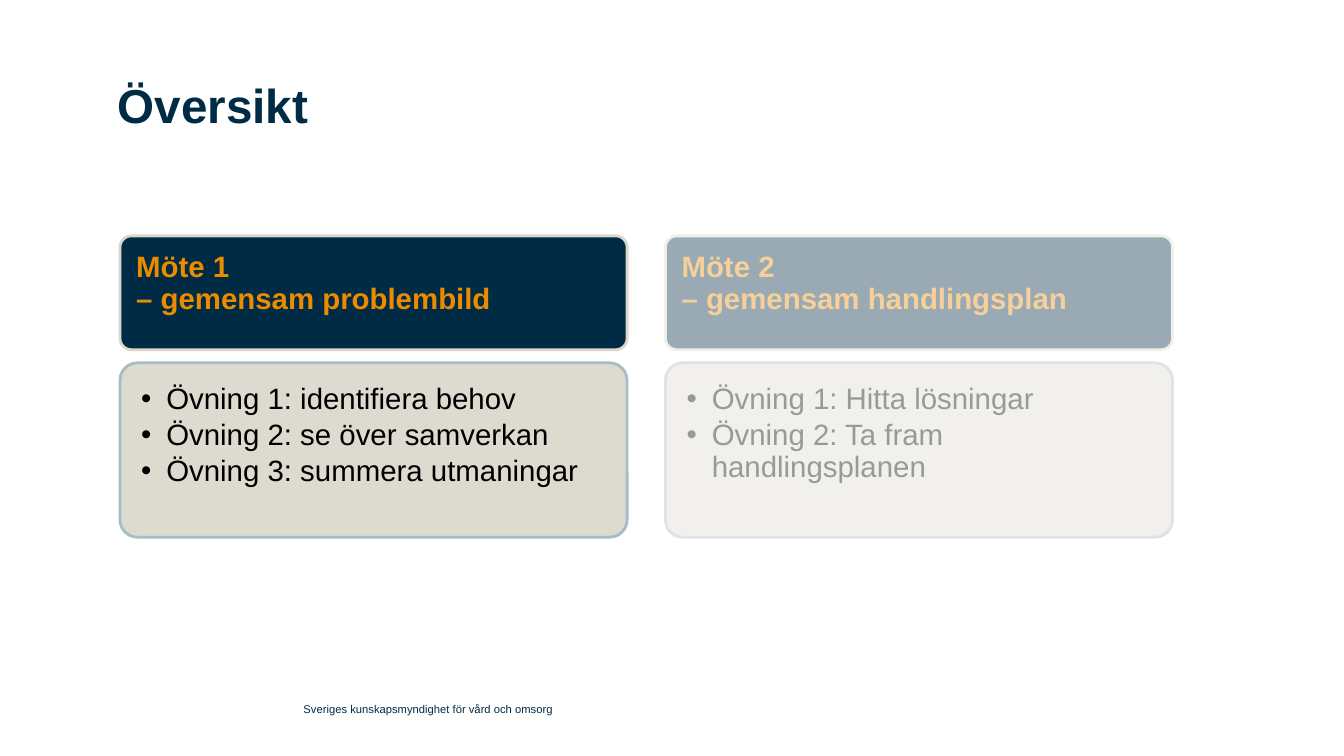
from lxml import etree
from pptx import Presentation
from pptx.dml.color import RGBColor
from pptx.enum.shapes import MSO_SHAPE
from pptx.enum.text import MSO_ANCHOR
from pptx.oxml.ns import qn
from pptx.util import Inches, Pt

ROUNDED = MSO_SHAPE.ROUNDED_RECTANGLE
RECTANGLE = MSO_SHAPE.RECTANGLE
TOP = MSO_ANCHOR.TOP
MIDDLE = MSO_ANCHOR.MIDDLE

FONT = "Arial"
COLORS = {
    "navy": "002B45",
    "orange": "ED8B00",
    "sand": "DAD7CB",
    "mist": "A6BCC6",
    "black": "000000",
    "white": "FFFFFF",
}
MEETINGS = [
    (1.19, ["Möte 1", "– gemensam problembild"],
     ["Övning 1: identifiera behov", "Övning 2: se över samverkan",
      "Övning 3: summera utmaningar"]),
    (6.6, ["Möte 2", "– gemensam handlingsplan"],
     ["Övning 1: Hitta lösningar", "Övning 2: Ta fram handlingsplanen"]),
]
CARD_WIDTH = 5.03
PAD = 0.16


def color(name):
    return RGBColor.from_string(COLORS[name])


def add_panel(page, kind, place, fill, opacity=100, line=None):
    panel = page.shapes.add_shape(kind, *map(Inches, place))
    panel.shadow.inherit = False
    panel.fill.solid()
    panel.fill.fore_color.rgb = color(fill)
    if opacity < 100:
        tint = panel.fill._xPr.find(".//" + qn("a:srgbClr"))
        etree.SubElement(tint, qn("a:alpha"), val=str(opacity * 1000))
    if line:
        panel.line.color.rgb = color(line)
        panel.line.width = Pt(2)
    else:
        panel.line.fill.background()
    if kind == ROUNDED:
        panel.adjustments[0] = 0.1


def add_box(page, place, insets=(0, 0, 0, 0), anchor=TOP):
    frame = page.shapes.add_textbox(*map(Inches, place)).text_frame
    frame.word_wrap = True
    frame.vertical_anchor = anchor
    (frame.margin_left, frame.margin_top,
     frame.margin_right, frame.margin_bottom) = map(Inches, insets)
    return frame


def add_span(para, text, size, name, bold=False):
    span = para.add_run()
    span.text = text
    span.font.name = FONT
    span.font.size = Pt(size)
    span.font.bold = bold
    span.font.color.rgb = color(name)


def add_bullet(para):
    props = para._p.get_or_add_pPr()
    props.set("marL", str(Inches(0.25)))
    props.set("indent", str(-Inches(0.25)))
    etree.SubElement(props, qn("a:buFont"), typeface=FONT)
    etree.SubElement(props, qn("a:buChar"), char="•")


def add_heading(page, left, lines):
    add_panel(page, ROUNDED, (left, 2.34, CARD_WIDTH, 1.13), "navy", line="sand")
    frame = add_box(page, (left, 2.34, CARD_WIDTH, 0.75), (PAD, PAD, PAD, 0.09))
    para = frame.paragraphs[0]
    para.line_spacing = 0.9
    for index, text in enumerate(lines):
        if index:
            para.add_line_break()
        add_span(para, text, 21, "orange", bold=True)


def add_exercises(page, left, exercises):
    add_panel(page, ROUNDED, (left, 3.6, CARD_WIDTH, 1.73), "sand", 90, "mist")
    frame = add_box(page, (left + 0.05, 3.65, CARD_WIDTH - 0.1, 1.63), (PAD,) * 4)
    for index, text in enumerate(exercises):
        para = frame.add_paragraph() if index else frame.paragraphs[0]
        add_bullet(para)
        para.line_spacing = 0.9
        para.space_after = Pt(3)
        add_span(para, text, 21, "black")


def main():
    deck = Presentation()
    deck.slide_width = Inches(13.33)
    deck.slide_height = Inches(7.5)
    page = deck.slides.add_slide(deck.slide_layouts[6])

    # Title
    title = add_box(page, (1.17, 0.75, 10.14, 1.42))
    add_span(title.paragraphs[0], "Översikt", 34, "navy", bold=True)

    # Meetings with their exercises
    for left, heading, exercises in MEETINGS:
        add_heading(page, left, heading)
        add_exercises(page, left, exercises)

    # Footer
    footer = add_box(page, (3.01, 6.89, 5.91, 0.29), anchor=MIDDLE)
    add_span(footer.paragraphs[0], "Sveriges kunskapsmyndighet för vård och omsorg",
             8, "navy")

    # Veil that fades the second meeting
    add_panel(page, RECTANGLE, (6.54, 0, 6.67, 7.5), "white", 60)

    deck.save("out.pptx")


if __name__ == "__main__":
    main()
